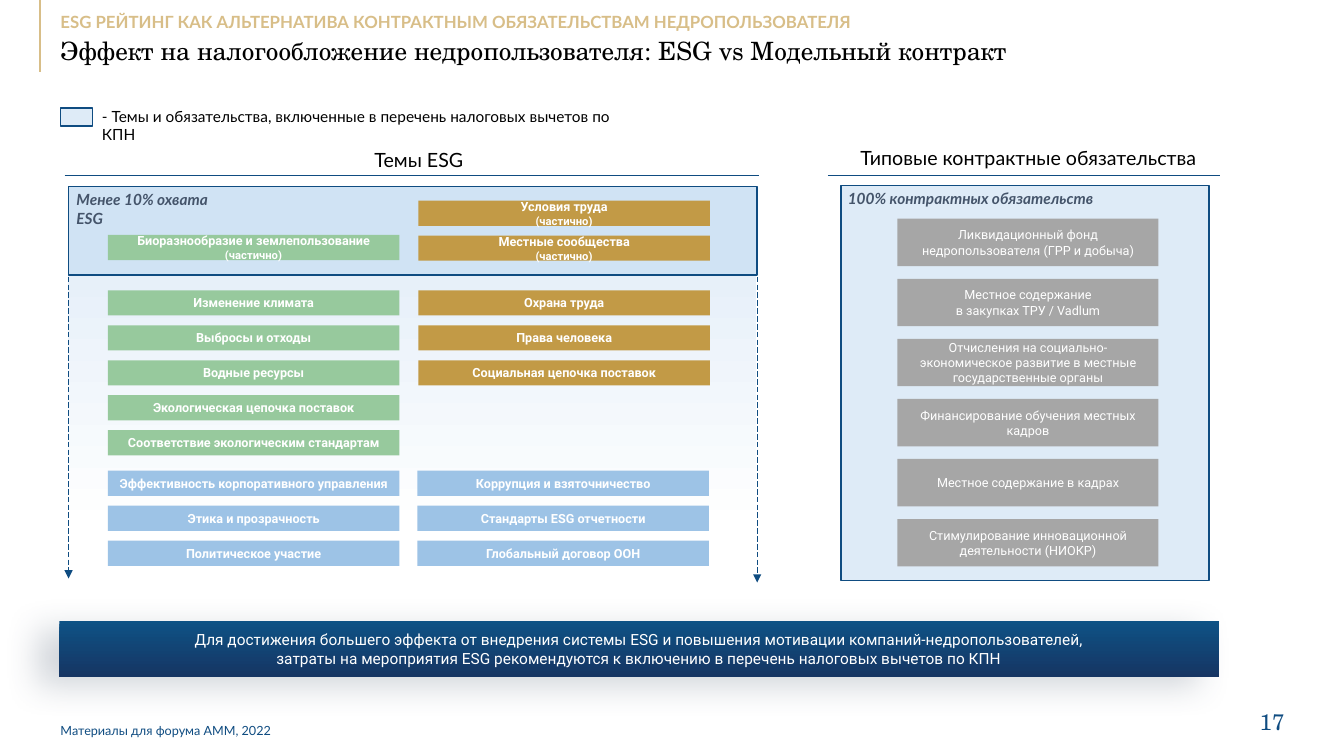
from lxml import etree
from pptx import Presentation
from pptx.dml.color import RGBColor
from pptx.enum.dml import MSO_LINE
from pptx.enum.shapes import MSO_CONNECTOR, MSO_SHAPE
from pptx.enum.text import MSO_ANCHOR, MSO_AUTO_SIZE, PP_ALIGN
from pptx.oxml.ns import qn
from pptx.util import Inches, Pt

RECT, STRAIGHT = MSO_SHAPE.RECTANGLE, MSO_CONNECTOR.STRAIGHT
LONG_DASH, FIXED_SIZE = MSO_LINE.LONG_DASH, MSO_AUTO_SIZE.NONE
LEFT, CENTER, RIGHT = PP_ALIGN.LEFT, PP_ALIGN.CENTER, PP_ALIGN.RIGHT
TOP, MIDDLE = MSO_ANCHOR.TOP, MSO_ANCHOR.MIDDLE

# The grid has 133.3 columns and 75 rows, ten to the inch
COLUMNS, ROWS = 133.3, 75
CELL = Inches(0.1)

COLORS = {
    "sand": "D8BE88", "navy": "0F4C81", "black": "000000", "white": "FFFFFF",
    "slate": "44546A", "banner_top": "0E5285", "banner_end": "163563",
    "fade": "E7F0F9", "covered": "D0E3F4", "deductible": "DEEBF7",
    "social": "C29A46", "environment": "97C99D", "governance": "9DC3E6",
    "contract": "A6A6A6",
}
SANS, BODY, SERIF = "Lato", "Roboto", "TeX Gyre Schola"


class SlideBuilder:
    """Holds the current slide and places elements on its grid."""

    def __init__(self, deck):
        self.slide = deck.slides.add_slide(deck.slide_layouts[5])

    def cells(self, *lengths):
        return [round(length * CELL) for length in lengths]

    def color(self, name):
        return RGBColor.from_string(COLORS[name])

    def fill_text(self, frame, lines, size, font, color, align=LEFT, anchor=TOP,
                  inset=(0, 0), wrap=True, spacing=1.0, bold=False, italic=False,
                  last_size=None):
        across, down = self.cells(*inset)
        layout = {"word_wrap": wrap, "auto_size": FIXED_SIZE,
                  "vertical_anchor": anchor, "margin_left": across,
                  "margin_right": across, "margin_top": down, "margin_bottom": down}
        for key, value in layout.items():
            setattr(frame, key, value)
        frame.text = "\n".join(lines)
        for paragraph in frame.paragraphs:
            paragraph.alignment = align
            paragraph.line_spacing = spacing
            face = {"name": font, "size": Pt(size), "bold": bold, "italic": italic}
            for key, value in face.items():
                setattr(paragraph.runs[0].font, key, value)
            paragraph.runs[0].font.color.rgb = self.color(color)
        if last_size:
            frame.paragraphs[-1].runs[0].font.size = Pt(last_size)

    def title(self, area, text, **style):
        heading = self.slide.shapes.title
        for key, value in zip(("left", "top", "width", "height"), self.cells(*area)):
            setattr(heading, key, value)
        self.fill_text(heading.text_frame, [text], **style)

    def label(self, area, text, **style):
        box = self.slide.shapes.add_textbox(*self.cells(*area))
        self.fill_text(box.text_frame, [text], **style)

    def block(self, area, fill, outline=None, lines=None, fade_end=1, **style):
        """Draws a rectangle; a pair of fill colours makes a vertical gradient."""
        panel = self.slide.shapes.add_shape(RECT, *self.cells(*area))
        panel.shadow.inherit = False
        if isinstance(fill, tuple):
            panel.fill.gradient()
            panel.fill.gradient_angle = 270
            for stop, name, place in zip(panel.fill.gradient_stops, fill, (0, fade_end)):
                stop.color.rgb = self.color(name)
                stop.position = place
        else:
            panel.fill.solid()
            panel.fill.fore_color.rgb = self.color(fill)
        if outline:
            panel.line.color.rgb = self.color(outline)
            panel.line.width = Pt(1)
        else:
            panel.line.fill.background()
        if lines:
            self.fill_text(panel.text_frame, lines, align=CENTER, anchor=MIDDLE,
                           font=BODY, color="white", **style)
        return panel

    def soft_shadow(self, panel, color, opacity, blur, distance, angle):
        effects = panel.element.spPr.find(qn("a:effectLst"))
        shadow = etree.SubElement(effects, qn("a:outerShdw"), blurRad=str(Pt(blur)),
                                  dist=str(Pt(distance)), dir=str(angle * 60000),
                                  algn="ctr", rotWithShape="0")
        tint = etree.SubElement(shadow, qn("a:srgbClr"), val=COLORS[color])
        etree.SubElement(tint, qn("a:alpha"), val=str(opacity * 1000))

    def rule(self, start, end, color="navy", width=0.5, arrow=False):
        connector = self.slide.shapes.add_connector(STRAIGHT, *self.cells(*start, *end))
        connector.line.color.rgb = self.color(color)
        connector.line.width = Pt(width)
        properties = connector.element.spPr
        if arrow:
            connector.line.dash_style = LONG_DASH
            etree.SubElement(properties.find(qn("a:ln")), qn("a:tailEnd"), type="triangle")
        etree.SubElement(properties, qn("a:effectLst"))


# Topics: colour, left column, first row, lines of each chip
TOPIC_STEP = 3.47
PARTLY = "(частично)"
TOPICS = [
    ("social", 41.5, 19.9, [["Условия труда", PARTLY], ["Местные сообщества", PARTLY]]),
    ("environment", 10.7, 23.3, [["Биоразнообразие и землепользование", PARTLY]]),
    ("environment", 10.7, 28.8, [
        ["Изменение климата"], ["Выбросы и отходы"], ["Водные ресурсы"],
        ["Экологическая цепочка поставок"], ["Соответствие экологическим стандартам"]]),
    ("social", 41.5, 28.8, [
        ["Охрана труда"], ["Права человека"], ["Социальная цепочка поставок"]]),
    ("governance", 10.7, 46.7, [
        ["Эффективность корпоративного управления"], ["Этика и прозрачность"],
        ["Политическое участие"]]),
    ("governance", 41.4, 46.7, [
        ["Коррупция и взяточничество"], ["Стандарты ESG отчетности"],
        ["Глобальный договор ООН"]]),
]
DUTY_TOP, DUTY_STEP = 21.7, 5.96
DUTIES = [
    ["Ликвидационный фонд", "недропользователя (ГРР и добыча)"],
    ["Местное содержание", "в закупках ТРУ / Vadlum"],
    ["Отчисления на социально-", "экономическое развитие в местные государственные органы"],
    ["Финансирование обучения местных кадров"],
    ["Местное содержание в кадрах"],
    ["Стимулирование инновационной деятельности (НИОКР)"],
]
CHIP_INSET = (0.4, 0.4)
HEADING = {"size": 14, "font": SANS, "color": "black", "align": CENTER, "anchor": MIDDLE}
COVERAGE = {"size": 11, "font": SANS, "color": "slate", "bold": True, "italic": True,
            "inset": (1, 0.5)}


def main():
    deck = Presentation()
    deck.slide_width, deck.slide_height = round(COLUMNS * CELL), ROWS * CELL
    page = SlideBuilder(deck)

    # Header
    page.rule((4, 0), (4, 7.1), color="sand", width=1.25)
    page.title((6, 3.8, 111.1, 2.7),
               "Эффект на налогообложение недропользователя: ESG vs Модельный контракт",
               size=18, font=SERIF, color="black", spacing=0.9)
    page.label((6, 1.4, 111.1, 1.8),
               "ESG РЕЙТИНГ КАК АЛЬТЕРНАТИВА КОНТРАКТНЫМ ОБЯЗАТЕЛЬСТВАМ НЕДРОПОЛЬЗОВАТЕЛЯ",
               size=12, font=SANS, color="sand", spacing=0.9, bold=True)

    # Legend
    page.block((6, 10.7, 3.2, 1.8), "deductible", "navy")
    page.label((9.7, 10.2, 53.8, 2.6),
               "- Темы и обязательства, включенные в перечень налоговых вычетов по КПН",
               size=11, font=SANS, color="black", inset=CHIP_INSET)

    # ESG topics
    page.label((5.9, 14.2, 71.3, 3.2), "Темы ESG", **HEADING)
    page.rule((6.4, 17.4), (75.3, 17.4))
    page.block((6.7, 27.3, 68.3, 29.6), ("fade", "white"), fade_end=0.86)
    page.block((6.8, 18.5, 68.3, 8.8), "covered", "navy")
    for color, left, top, chips in TOPICS:
        for row, lines in enumerate(chips):
            page.block((left, top + row * TOPIC_STEP, 28.9, 2.5), color, lines=lines,
                       size=9, bold=True, inset=CHIP_INSET,
                       last_size=8 if PARTLY in lines else None)
    for side, bottom in ((75.1, 57.8), (6.8, 57.4)):
        page.rule((side, 25.9), (side, bottom), arrow=True)
    page.label((6.6, 18.4, 17.5, 2.9), "Менее 10% охвата ESG", **COVERAGE)

    # Contract obligations
    page.label((81.9, 14.6, 40.2, 2.6), "Типовые контрактные обязательства",
               spacing=0.8, **HEADING)
    page.rule((82.1, 17.4), (121, 17.4))
    page.block((83.4, 18.4, 36.5, 39.2), "deductible", "navy")
    for row, lines in enumerate(DUTIES):
        page.block((89, DUTY_TOP + row * DUTY_STEP, 25.9, 4.7), "contract",
                   lines=lines, size=9, inset=CHIP_INSET)
    page.label((83.1, 18.3, 27.2, 2.9), "100% контрактных обязательств",
               wrap=False, **COVERAGE)

    # Conclusion
    conclusion = page.block(
        (5.9, 61.6, 115, 5.6), ("banner_top", "banner_end"), size=11, inset=(1, 0.5),
        lines=["Для достижения большего эффекта от внедрения системы ESG и повышения "
               "мотивации компаний-недропользователей,",
               "затраты на мероприятия ESG рекомендуются к включению в перечень "
               "налоговых вычетов по КПН"])
    page.soft_shadow(conclusion, "slate", opacity=23, blur=24, distance=17, angle=160)

    # Footer
    page.label((6, 71.7, 66.9, 1.5), "Материалы для форума АММ, 2022",
               size=9, font=SANS, color="navy", anchor=MIDDLE)
    page.label((122.8, 70.2, 4.6, 2.7), "17", size=16, font=SERIF, color="navy",
               align=RIGHT, anchor=MIDDLE)

    deck.save("out.pptx")


if __name__ == "__main__":
    main()
